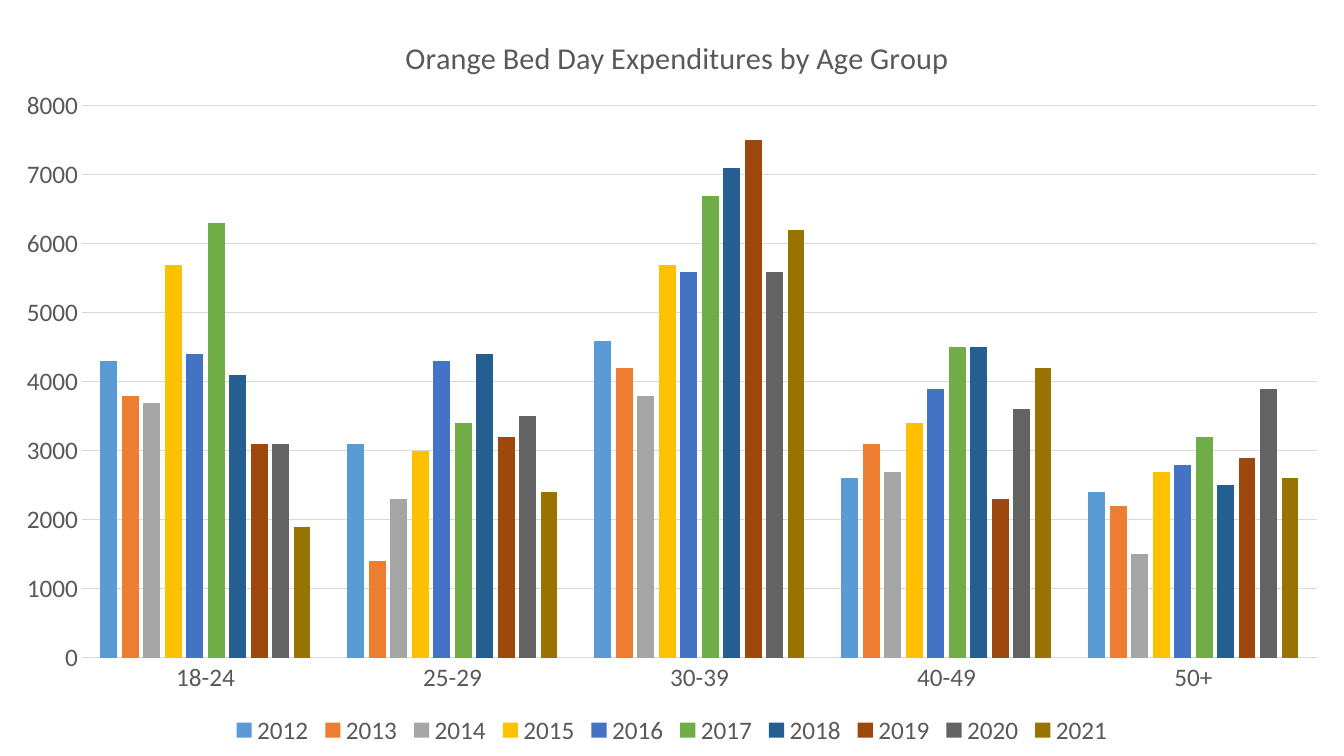
import pptx
import pptx.util
import pptx.chart.data
import pptx.dml.color
import pptx.enum.chart
import pptx.oxml
import pptx.oxml.ns

RGB = pptx.dml.color.RGBColor
GREY_TEXT = RGB(0x59, 0x59, 0x59)
GREY_LINE = RGB(0xD9, 0xD9, 0xD9)

# Content
TITLE = "Orange Bed Day Expenditures by Age Group"
AGE_GROUPS = ["18-24", "25-29", "30-39", "40-49", "50+"]
YEARS = [
    ("2012", RGB(0x5B, 0x9B, 0xD5), (4300, 3100, 4600, 2600, 2400)),
    ("2013", RGB(0xED, 0x7D, 0x31), (3800, 1400, 4200, 3100, 2200)),
    ("2014", RGB(0xA5, 0xA5, 0xA5), (3700, 2300, 3800, 2700, 1500)),
    ("2015", RGB(0xFF, 0xC0, 0x00), (5700, 3000, 5700, 3400, 2700)),
    ("2016", RGB(0x44, 0x72, 0xC4), (4400, 4300, 5600, 3900, 2800)),
    ("2017", RGB(0x70, 0xAD, 0x47), (6300, 3400, 6700, 4500, 3200)),
    ("2018", RGB(0x25, 0x5E, 0x91), (4100, 4400, 7100, 4500, 2500)),
    ("2019", RGB(0x9E, 0x48, 0x0E), (3100, 3200, 7500, 2300, 2900)),
    ("2020", RGB(0x63, 0x63, 0x63), (3100, 3500, 5600, 3600, 3900)),
    ("2021", RGB(0x99, 0x73, 0x00), (1900, 2400, 6200, 4200, 2600)),
]

# Lengths in px
PX = 9071  # EMU per px
SLIDE_W, SLIDE_H = 1344, 756
PLOT_BOX = (82, 106, 1235, 552)
LEGEND_BOX = (228, 720, 888, 32)
TITLE_POS = (400, 31)


def format_font(font, size=18, color=GREY_TEXT, name="Calibri", bold=False):
    font.size = pptx.util.Pt(size)
    font.color.rgb = color
    font.name = name
    font.bold = bold


def write(tf, text, **fmt):
    r = tf.paragraphs[0].add_run()
    r.text = text
    format_font(r.font, **fmt)


def format_line(line):
    line.color.rgb = GREY_LINE
    line.width = pptx.util.Pt(0.75)


def place(element, index, box, inner=False):
    """Give a chart part a fixed place, as fractions of the chart."""
    for old in element.findall(pptx.oxml.ns.qn("c:layout")):
        element.remove(old)
    target = '<c:layoutTarget val="inner"/>' if inner else ""
    modes = '<c:xMode val="edge"/><c:yMode val="edge"/>'
    sizes = zip("xywh", box, (SLIDE_W, SLIDE_H) * 2)
    values = "".join(f'<c:{k} val="{v / full:.4f}"/>' for k, v, full in sizes)
    xml = (f'<c:layout {pptx.oxml.ns.nsdecls("c")}><c:manualLayout>'
           f'{target}{modes}{values}</c:manualLayout></c:layout>')
    element.insert(index, pptx.oxml.parse_xml(xml))


def main():
    prs = pptx.Presentation()
    prs.slide_width, prs.slide_height = SLIDE_W * PX, SLIDE_H * PX
    s = prs.slides.add_slide(prs.slide_layouts[6])

    # Chart
    data = pptx.chart.data.CategoryChartData()
    data.categories = AGE_GROUPS
    for year, _, values in YEARS:
        data.add_series(year, values)
    chart = s.shapes.add_chart(
        pptx.enum.chart.XL_CHART_TYPE.COLUMN_CLUSTERED,
        0, 0, prs.slide_width, prs.slide_height, data).chart
    format_font(chart.font)

    # Columns
    plot = chart.plots[0]
    plot.vary_by_categories = False
    plot.gap_width, plot.overlap = 219, -27
    for series, (_, color, _) in zip(plot.series, YEARS):
        series.format.fill.solid()
        series.format.fill.fore_color.rgb = color

    # Axes
    cat, val = chart.category_axis, chart.value_axis
    for axis in (cat, val):
        axis.major_tick_mark = pptx.enum.chart.XL_TICK_MARK.NONE
        axis.minor_tick_mark = pptx.enum.chart.XL_TICK_MARK.NONE
        format_font(axis.tick_labels.font)
    format_line(cat.format.line)
    val.format.line.fill.background()
    val.minimum_scale, val.maximum_scale, val.major_unit = 0, 8000, 1000
    val.has_major_gridlines = True
    format_line(val.major_gridlines.format.line)

    # Title and legend
    chart.has_title = True
    write(chart.chart_title.text_frame, TITLE, size=21.6)
    chart.has_legend = True
    chart.legend.position = pptx.enum.chart.XL_LEGEND_POSITION.BOTTOM
    chart.legend.include_in_layout = False
    format_font(chart.legend.font)

    # Places of the chart parts
    root = chart.element
    place(root.xpath("c:chart/c:title")[0], 1, TITLE_POS)
    place(root.xpath("c:chart/c:plotArea")[0], 0, PLOT_BOX, inner=True)
    place(root.xpath("c:chart/c:legend")[0], 1, LEGEND_BOX)

    prs.save("out.pptx")


if __name__ == "__main__":
    main()
